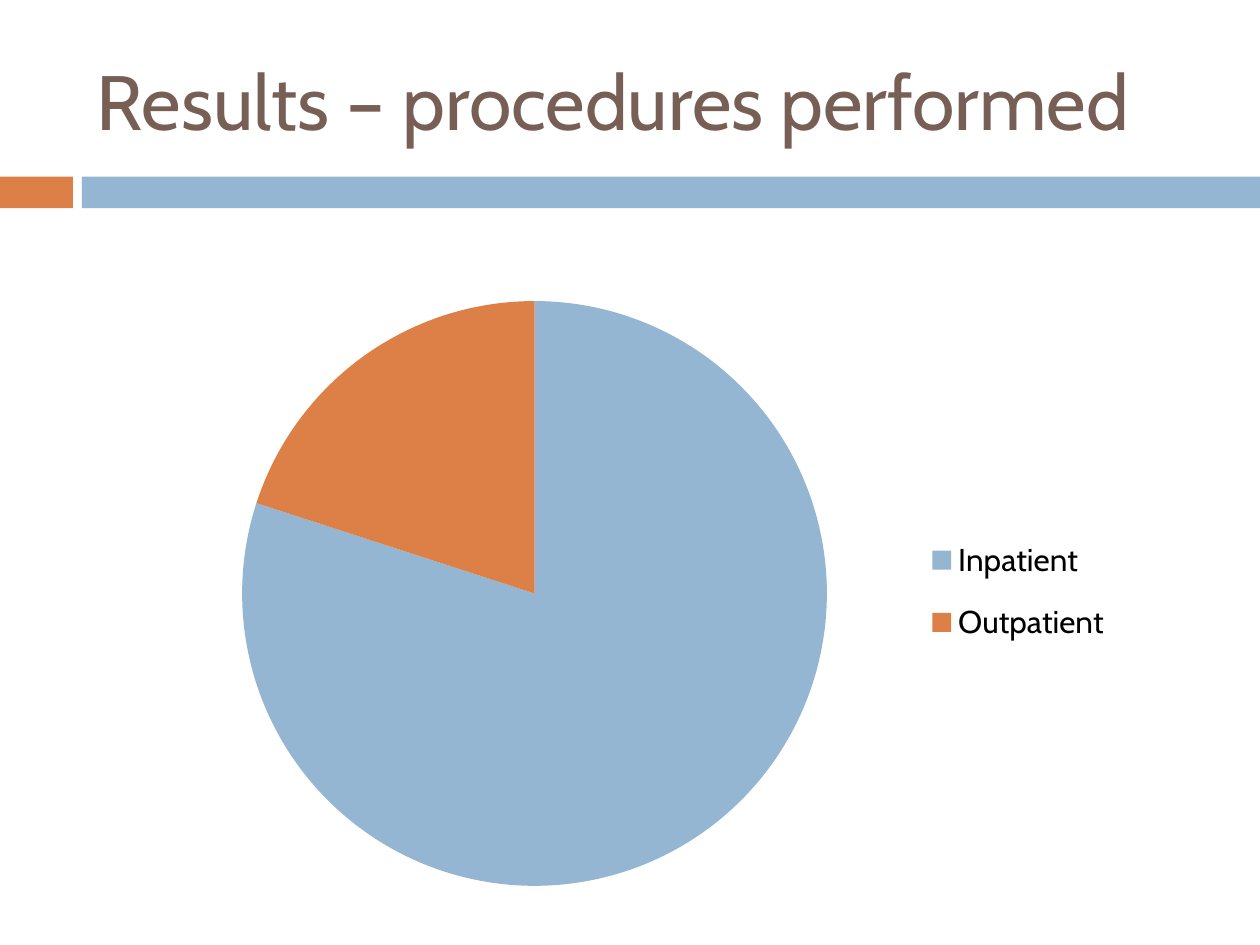
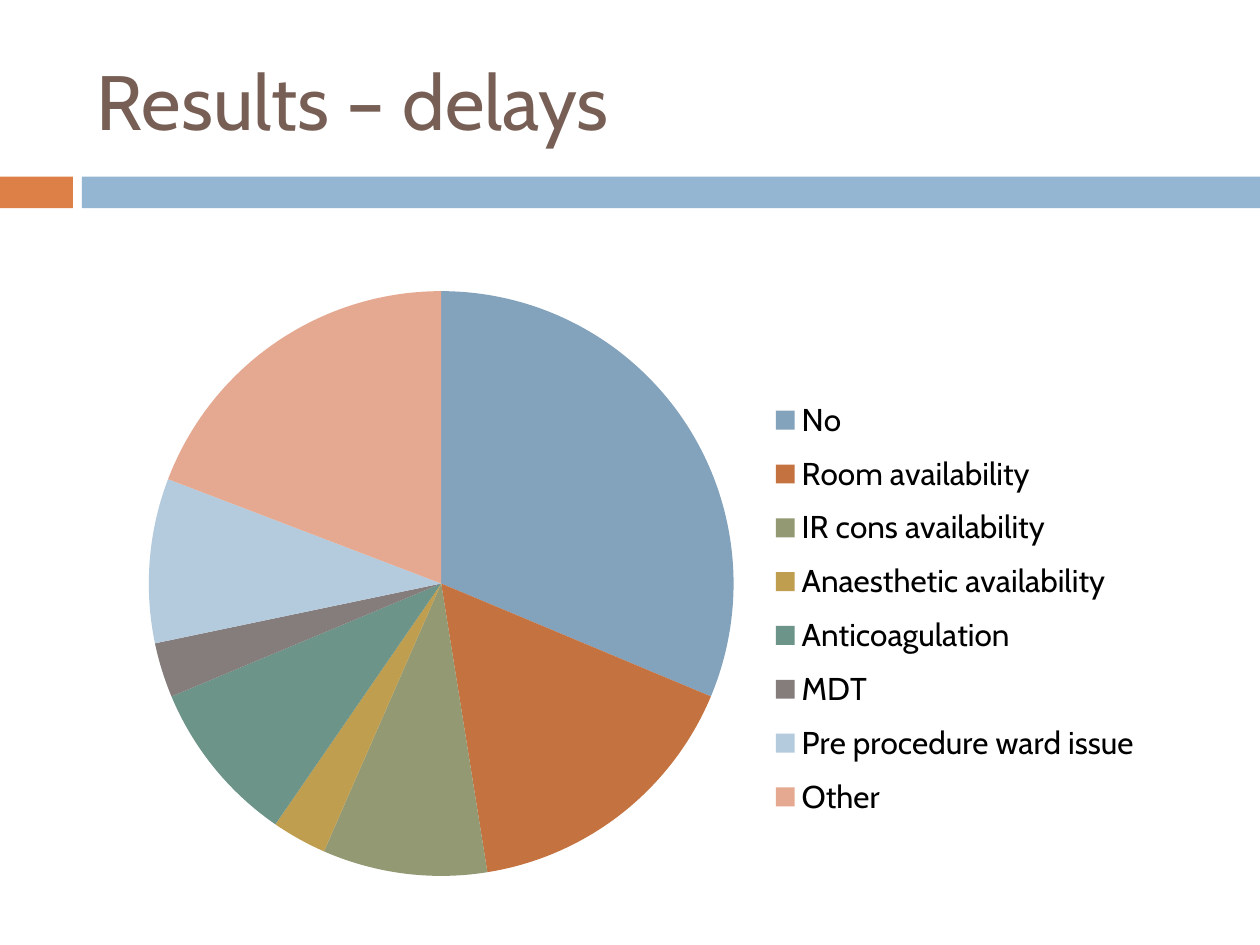
from lxml.etree import SubElement
from pptx import Presentation
from pptx.chart.data import CategoryChartData
from pptx.dml.color import RGBColor
from pptx.enum.chart import XL_CHART_TYPE as ChartType, XL_LEGEND_POSITION as LegendPosition
from pptx.enum.shapes import MSO_SHAPE as Preset
from pptx.enum.text import MSO_ANCHOR as Anchor, MSO_AUTO_SIZE as AutoSize, PP_ALIGN as Align
from pptx.oxml.ns import qn
from pptx.util import Cm, Pt

FONT = "Cabin"
COLOURS = {
    "title": "775F55", "text": "000000",
    "blue": "94B6D2", "orange": "DD8047",
    "steel": "83A2BB", "rust": "C47240", "olive": "929973", "gold": "BF9E50",
    "teal": "6C9489", "grey": "857C7C", "pale blue": "B4CBDE", "salmon": "E5A991",
}
SLIDE_WIDTH, SLIDE_HEIGHT = 25.4, 19.05
TITLE_BOX = (1.7, 0.64, 22.66, 2.74)
BAND_TOP, BAND_HEIGHT = 3.56, 0.64
BANDS = [("orange", 0, 1.47), ("blue", 1.65, SLIDE_WIDTH - 1.65)]
CHART_LEFT, CHART_WIDTH, CHART_HEIGHT = 1.5, 22.66, 12.5
PIE_SIZE = 11.79

RESULTS = [
    {
        "title": "Results – procedures performed",
        "chart_top": 5.72,
        "pie_at": (3.38, 0.35),
        "legend_box": (17.15, 4.7, 3.75, 3.0),
        "slices": [("Inpatient", 80, "blue"), ("Outpatient", 20, "orange")],
    },
    {
        "title": "Results – delays",
        "chart_top": 5.54,
        "pie_at": (1.5, 0.33),
        "legend_box": (13.95, 2.23, 7.6, 9.0),
        "slices": [
            ("No", 31, "steel"),
            ("Room availability", 16, "rust"),
            ("IR cons availability", 9, "olive"),
            ("Anaesthetic availability", 3, "gold"),
            ("Anticoagulation", 9, "teal"),
            ("MDT", 3, "grey"),
            ("Pre procedure ward issue", 9, "pale blue"),
            ("Other", 19, "salmon"),
        ],
    },
]


def colour(name):
    return RGBColor.from_string(COLOURS[name])


def style_font(font, size, name):
    font.name = FONT
    font.size = Pt(size)
    font.bold = False
    font.color.rgb = colour(name)


def add_title(slide, wording):
    title = slide.shapes.title
    title.left, title.top, title.width, title.height = map(Cm, TITLE_BOX)
    frame = title.text_frame
    frame.text = wording
    frame.word_wrap = True
    frame.auto_size = AutoSize.NONE
    frame.vertical_anchor = Anchor.MIDDLE
    paragraph = frame.paragraphs[0]
    paragraph.alignment = Align.LEFT
    style_font(paragraph.runs[0].font, 44, "title")


def add_bands(slide):
    for name, left, width in BANDS:
        band = slide.shapes.add_shape(
            Preset.RECTANGLE, Cm(left), Cm(BAND_TOP), Cm(width), Cm(BAND_HEIGHT))
        band.shadow.inherit = False
        band.fill.solid()
        band.fill.fore_color.rgb = colour(name)
        band.line.fill.background()


def place(part, box, inner=False):
    layout = part.find(qn("c:layout"))
    if layout is None:
        layout = SubElement(part, qn("c:layout"))
        anchor = part.find(qn("c:legendPos"))
        if anchor is None:
            part.insert(0, layout)
        else:
            anchor.addnext(layout)
    manual = SubElement(layout, qn("c:manualLayout"))
    settings = [("layoutTarget", "inner")] if inner else []
    settings += [("xMode", "edge"), ("yMode", "edge")]
    extents = (CHART_WIDTH, CHART_HEIGHT) * 2
    settings += [(key, f"{length / extent:.4f}")
                 for key, length, extent in zip("xywh", box, extents)]
    for tag, value in settings:
        SubElement(manual, qn(f"c:{tag}")).set("val", value)


def add_pie(slide, result):
    labels, values, fills = zip(*result["slices"])
    data = CategoryChartData()
    data.categories = labels
    data.add_series("Series 1", values)
    chart = slide.shapes.add_chart(
        ChartType.PIE, Cm(CHART_LEFT), Cm(result["chart_top"]),
        Cm(CHART_WIDTH), Cm(CHART_HEIGHT), data).chart
    style_font(chart.font, 18, "text")
    chart.has_title = False
    chart.has_legend = True
    chart.legend.position = LegendPosition.RIGHT
    chart.legend.include_in_layout = False
    style_font(chart.legend.font, 18, "text")
    pie = chart.plots[0]
    pie.vary_by_categories = True
    for index, name in enumerate(fills):
        piece = pie.series[0].points[index].format
        piece.fill.solid()
        piece.fill.fore_color.rgb = colour(name)
        piece.line.fill.background()
    plot_area = chart.element.find(".//" + qn("c:plotArea"))
    place(plot_area, (*result["pie_at"], PIE_SIZE, PIE_SIZE), inner=True)
    place(chart.element.find(".//" + qn("c:legend")), result["legend_box"])


def main():
    deck = Presentation()
    deck.slide_width, deck.slide_height = Cm(SLIDE_WIDTH), Cm(SLIDE_HEIGHT)
    for result in RESULTS:
        slide = deck.slides.add_slide(deck.slide_layouts[5])
        add_bands(slide)
        add_title(slide, result["title"])
        add_pie(slide, result)
    deck.save("out.pptx")


if __name__ == "__main__":
    main()
